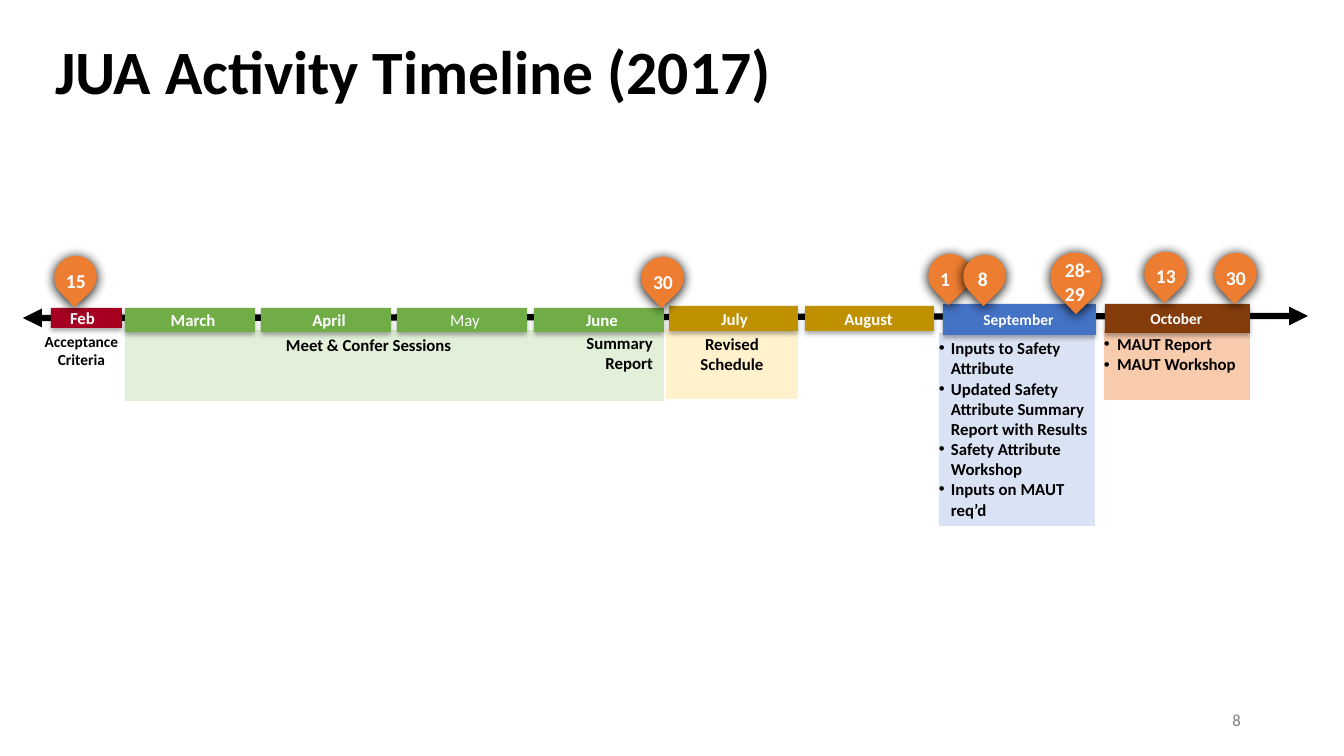
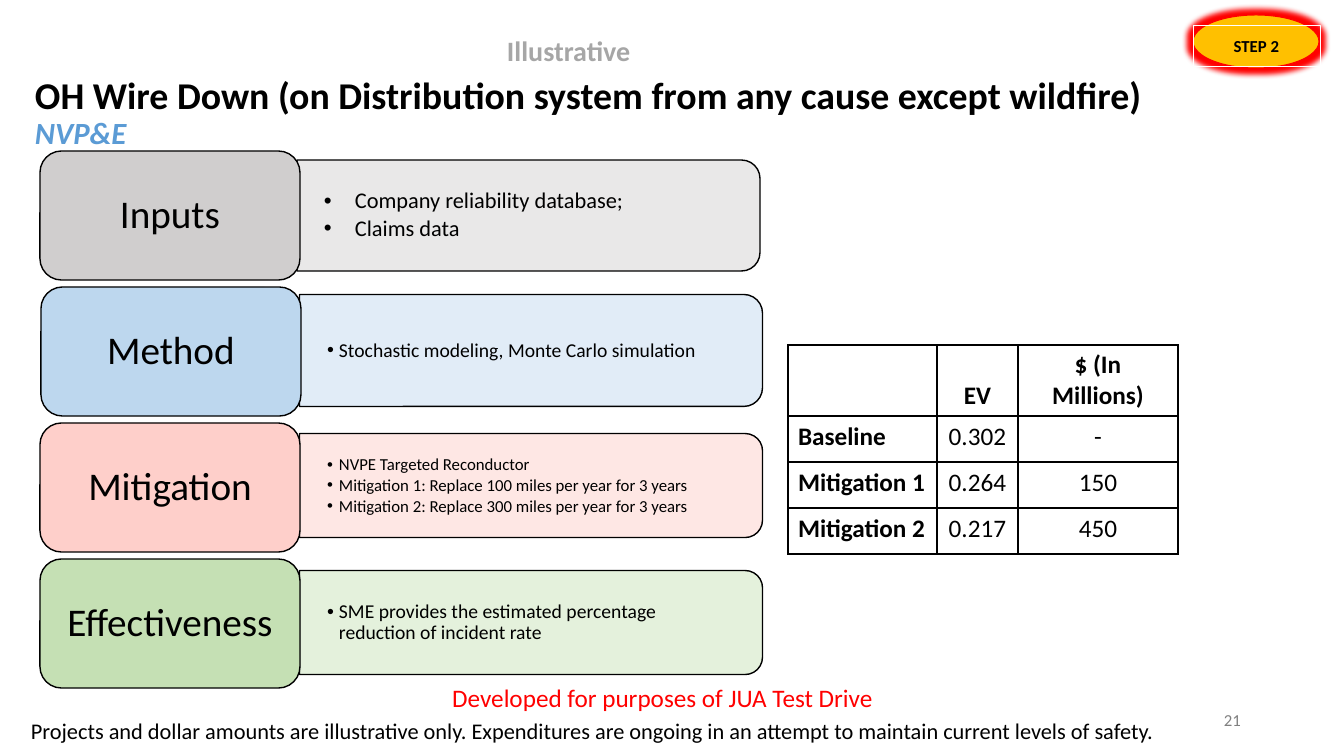
import pptx
import pptx.dml.color
import pptx.enum.shapes
import pptx.enum.text
import pptx.oxml.ns
import pptx.util
from lxml import etree

SHAPE = pptx.enum.shapes.MSO_SHAPE
ALIGN = {
    "l": pptx.enum.text.PP_ALIGN.LEFT,
    "c": pptx.enum.text.PP_ALIGN.CENTER,
    "r": pptx.enum.text.PP_ALIGN.RIGHT,
}
ANCHOR = {
    "t": pptx.enum.text.MSO_ANCHOR.TOP,
    "m": pptx.enum.text.MSO_ANCHOR.MIDDLE,
    "b": pptx.enum.text.MSO_ANCHOR.BOTTOM,
}
COLORS = {
    "black": "000000", "white": "FFFFFF", "gray": "808080", "silver": "A6A6A6",
    "red": "FF0000", "sky": "5B9BD5", "pin": "ED7D31", "step": "FFC000",
    "crimson": "A50021", "green": "70AD47", "gold": "BF9000", "blue": "4472C4",
    "brown": "843C0B", "pale green": "E2F0D9", "pale gold": "FFF2CC",
    "pale blue": "DAE3F3", "pale orange": "F8CBAD", "input": "D0CECE",
    "input light": "E7E6E6", "method": "BDD7EE", "method light": "DEEBF7",
    "mitigation": "FECFCA", "mitigation light": "FEE5E2", "effect": "C5E0B4",
}
BAR_SHADOW = dict(blur=3.5, dist=2.2, alpha=32)
PIN_SHADOW = dict(blur=8.5, dist=1, alpha=100)


def px(n):
    return pptx.util.Emu(n * 12192000 // 1344)


def rgb(color):
    return pptx.dml.color.RGBColor.from_string(COLORS[color])


def sub(parent, tag, **attrs):
    attrs = {key: str(value) for key, value in attrs.items()}
    return etree.SubElement(parent, pptx.oxml.ns.qn(tag), attrs)


def add_effect(s, tag, color, alpha, **attrs):
    effects = s._element.spPr.find(pptx.oxml.ns.qn("a:effectLst"))
    clr = sub(sub(effects, tag, **attrs), "a:srgbClr", val=COLORS[color])
    sub(clr, "a:alpha", val=alpha * 1000)


class Deck:
    font = "Calibri"

    def __init__(self):
        self.prs = pptx.Presentation()
        self.prs.slide_width, self.prs.slide_height = px(1344), px(756)
        self.slide = None

    def new_slide(self, number):
        self.slide = self.prs.slides.add_slide(self.prs.slide_layouts[6])
        self.text((949, 700, 302, 40), [str(number)], size=12, color="gray",
                  align="r", anchor="m")

    def style(self, p, size, color="black", bold=False, italic=False, align="l"):
        p.alignment = ALIGN[align]
        p.font.name = self.font
        p.font.size = pptx.util.Pt(size)
        p.font.bold = bold
        p.font.italic = italic
        p.font.color.rgb = rgb(color)

    def fill_text(self, s, lines, anchor="t", inset=(10, 5, 10, 5), bullet=0,
                  spacing=None, after=0, **font):
        """Fill a shape with paragraphs; bullet is the hanging indent in px."""
        tf = s.text_frame
        tf.word_wrap = True
        tf.vertical_anchor = ANCHOR[anchor]
        tf.margin_left, tf.margin_top, tf.margin_right, tf.margin_bottom = map(px, inset)
        for i, line in enumerate(lines):
            p = tf.paragraphs[0] if i == 0 else tf.add_paragraph()
            p.add_run().text = line
            if bullet:
                pPr = p._p.get_or_add_pPr()
                pPr.set("marL", str(px(bullet)))
                pPr.set("indent", str(-px(bullet)))
                sub(pPr, "a:buFont", typeface="Arial")
                sub(pPr, "a:buChar", char="•")
            if spacing:
                p.line_spacing = spacing
            if after:
                p.space_after = pptx.util.Pt(after)
            self.style(p, **font)
        return tf

    def text(self, box, lines, **style):
        return self.fill_text(self.slide.shapes.add_textbox(*map(px, box)), lines, **style)

    def title(self, box, size, line):
        return self.text(box, [line], size=size, bold=True, anchor="m", spacing=0.9)

    def shape(self, kind, box, fill=None, line=None, width=1, shadow=None):
        s = self.slide.shapes.add_shape(kind, *map(px, box))
        s.shadow.inherit = False
        if fill:
            s.fill.solid()
            s.fill.fore_color.rgb = rgb(fill)
        else:
            s.fill.background()
        if line:
            s.line.color.rgb = rgb(line)
            s.line.width = pptx.util.Pt(width)
        else:
            s.line.fill.background()
        if shadow:
            add_effect(s, "a:outerShdw", "black", shadow["alpha"],
                       blurRad=pptx.util.Pt(shadow["blur"]),
                       dist=pptx.util.Pt(shadow["dist"]),
                       dir=5400000, algn="ctr", rotWithShape=0)
        return s

    def double_arrow(self, start, end, width):
        line = self.slide.shapes.add_connector(
            pptx.enum.shapes.MSO_CONNECTOR.STRAIGHT, *map(px, start + end))
        line.line.color.rgb = rgb("black")
        line.line.width = pptx.util.Pt(width)
        ln = line.line._get_or_add_ln()
        sub(ln, "a:headEnd", type="triangle")
        sub(ln, "a:tailEnd", type="triangle")
        sub(line._element.spPr, "a:effectLst")

    def month(self, name, box, fill, shift=0, size=12, bold=True):
        """Bar with its name moved right of the centre by shift px."""
        s = self.shape(SHAPE.RECTANGLE, box, fill, shadow=BAR_SHADOW)
        inset = (max(2 * shift, 0), 0, max(-2 * shift, 0), 0)
        self.fill_text(s, [name], size=size, color="white", bold=bold, align="c",
                       anchor="m", inset=inset)

    def pin(self, day, x, y, w=43, h=42, label=(2, 8, 54, 34)):
        s = self.shape(SHAPE.TEAR, (x, y, w, h), "pin", shadow=PIN_SHADOW)
        s.rotation = 136.3
        dx, dy, label_w, label_h = label
        self.text((x + dx, y + dy, label_w, label_h), [day], size=14,
                  color="white", bold=True)

    def note(self, box, fill, lines, **style):
        s = self.shape(SHAPE.RECTANGLE, box, fill)
        style = {"size": 12, "bold": True, "inset": (0, 5, 0, 5), **style}
        self.fill_text(s, lines, **style)

    def panel(self, box, fill, lines, size, bullet):
        """Panel with round right corners and bulleted text."""
        x, y, w, h = box
        s = self.shape(SHAPE.ROUND_2_SAME_RECTANGLE,
                       (x + (w - h) // 2, y + (h - w) // 2, h, w), fill, "black")
        s.rotation = 90
        color = s._element.spPr.find(pptx.oxml.ns.qn("a:solidFill"))[0]
        sub(color, "a:alpha", val=90000)
        self.text(box, lines, size=size, bullet=bullet, anchor="m", spacing=0.9,
                  after=round(size * 0.15, 1), inset=(27, 14, 33, 14))

    def label(self, box, fill, name):
        s = self.shape(SHAPE.ROUNDED_RECTANGLE, box, fill, "black")
        self.fill_text(s, [name], size=28, align="c", anchor="m", spacing=0.9,
                       inset=(21, 14, 21, 14))

    def table(self, x, y, widths, heights, rows):
        frame = self.slide.shapes.add_table(len(rows), len(widths), px(x), px(y),
                                            px(sum(widths)), px(sum(heights)))
        table = frame.table
        table.first_row = table.horz_banding = False
        for column, width in zip(table.columns, widths):
            column.width = px(width)
        for r, (row, height) in enumerate(zip(rows, heights)):
            table.rows[r].height = px(height)
            for c, value in enumerate(row):
                cell = table.cell(r, c)
                self.border(cell)
                cell.fill.background()
                cell.vertical_anchor = ANCHOR["t" if r else "b"]
                p = cell.text_frame.paragraphs[0]
                if value:
                    p.add_run().text = value
                self.style(p, 18, bold=r == 0 or c == 0, align="c" if c else "l")

    def border(self, cell):
        tcPr = cell._tc.get_or_add_tcPr()
        for side in ("a:lnL", "a:lnR", "a:lnT", "a:lnB"):
            ln = sub(tcPr, side, w=pptx.util.Pt(1))
            sub(sub(ln, "a:solidFill"), "a:srgbClr", val=COLORS["black"])


def timeline(deck):
    deck.new_slide(8)
    deck.title((45, 2, 1159, 146), 44, "JUA Activity Timeline (2017)")
    deck.note((1104, 329, 146, 71), "pale orange", ["MAUT Report", "MAUT Workshop"],
              bullet=13)
    deck.note((939, 333, 156, 193), "pale blue",
              ["Inputs to Safety Attribute",
               "Updated Safety Attribute Summary Report with Results",
               "Safety Attribute Workshop", "Inputs on MAUT req’d"], bullet=12)
    deck.double_arrow((23, 318), (1308, 316), 4.5)
    deck.note((125, 330, 539, 71), "pale green", ["Meet & Confer Sessions"],
              inset=(161, 5, 0, 5))
    deck.note((666, 329, 132, 70), "pale gold", ["Revised", "Schedule"], align="c")
    deck.text((506, 328, 157, 50), ["Summary", "Report"], size=12, bold=True, align="r")
    deck.text((40, 327, 83, 47), ["Acceptance Criteria"], size=11, bold=True,
              align="c", inset=(0, 5, 0, 5))

    deck.month("Feb", (51, 308, 71, 20), "crimson", shift=-4)
    for i, name in enumerate(["March", "April", "May", "June"]):
        deck.month(name, (125 + 136 * i + i // 3, 308, 130, 24), "green", shift=3,
                   bold=name != "May")
    deck.month("July", (669, 306, 129, 25), "gold", shift=1)
    deck.month("August", (805, 306, 129, 25), "gold", shift=-1)
    deck.month("September", (943, 304, 153, 31), "blue", shift=-1, size=11)
    deck.month("October", (1105, 304, 145, 29), "brown", shift=-1, size=11)

    deck.pin("15", 54, 256)
    deck.pin("30", 641, 257)
    deck.pin("1", 928, 254)
    deck.pin("8", 963, 255, label=(5, 7, 34, 34))
    deck.pin("28-29", 1051, 252, 50, 52, label=(4, 1, 55, 57))
    deck.pin("13", 1144, 252, label=(2, 7, 54, 34))
    deck.pin("30", 1214, 253)


def wire_down(deck):
    deck.new_slide(21)
    tf = deck.title((25, 65, 1300, 98), 27,
                    "OH Wire Down (on Distribution system from any cause except wildfire)")
    p = tf.add_paragraph()
    p.add_run().text = "NVP&E"
    p.line_spacing = 0.9
    deck.style(p, 22, "sky", bold=True, italic=True)

    steps = [
        ("Inputs", "input", "input light", 40, (297, 160, 463, 111), 16, 31,
         ["Company reliability database;", "Claims data"]),
        ("Method", "method", "method light", 41, (300, 295, 463, 112), 14, 12,
         ["Stochastic modeling, Monte Carlo simulation"]),
        ("Mitigation", "mitigation", "mitigation light", 40, (300, 434, 463, 104), 12, 12,
         ["NVPE Targeted Reconductor",
          "Mitigation 1: Replace 100 miles per year for 3 years",
          "Mitigation 2: Replace 300 miles per year for 3 years"]),
        ("Effectiveness", "effect", "pale green", 40, (300, 571, 463, 104), 14, 12,
         ["SME provides the estimated percentage reduction of incident rate"]),
    ]
    for i, (name, fill, light, x, box, size, bullet, lines) in enumerate(steps):
        deck.panel(box, light, lines, size, bullet)
        deck.label((x, 151 + 136 * i, 260, 129), fill, name)

    deck.table(788, 345, [149, 81, 160], [71, 46, 46, 46], [
        ["", "EV", "$ (In Millions)"],
        ["Baseline", "0.302", "-"],
        ["Mitigation 1", "0.264", "150"],
        ["Mitigation 2", "0.217", "450"],
    ])

    badge = deck.shape(SHAPE.OVAL, (1193, 15, 126, 53), "step", "red", 0.75)
    add_effect(badge, "a:glow", "red", 100, rad=pptx.util.Pt(8))
    frame = deck.shape(SHAPE.RECTANGLE, (1193, 25, 127, 41), line="white", width=0.5)
    deck.fill_text(frame, ["STEP 2"], size=12, bold=True, align="c", anchor="m",
                   inset=(2, 2, 2, 2))
    deck.note((351, 677, 623, 75), "white", ["Developed for purposes of JUA Test Drive"],
              size=18, color="red", bold=False, align="c")
    deck.text((497, 28, 342, 44), ["Illustrative"], size=20, color="silver", bold=True)
    deck.text((21, 712, 1302, 37),
              ["Projects and dollar amounts are illustrative only. Expenditures are "
               "ongoing in an attempt to maintain current levels of safety."], size=16)


def main():
    deck = Deck()
    timeline(deck)
    wire_down(deck)
    deck.prs.save("out.pptx")


if __name__ == "__main__":
    main()
